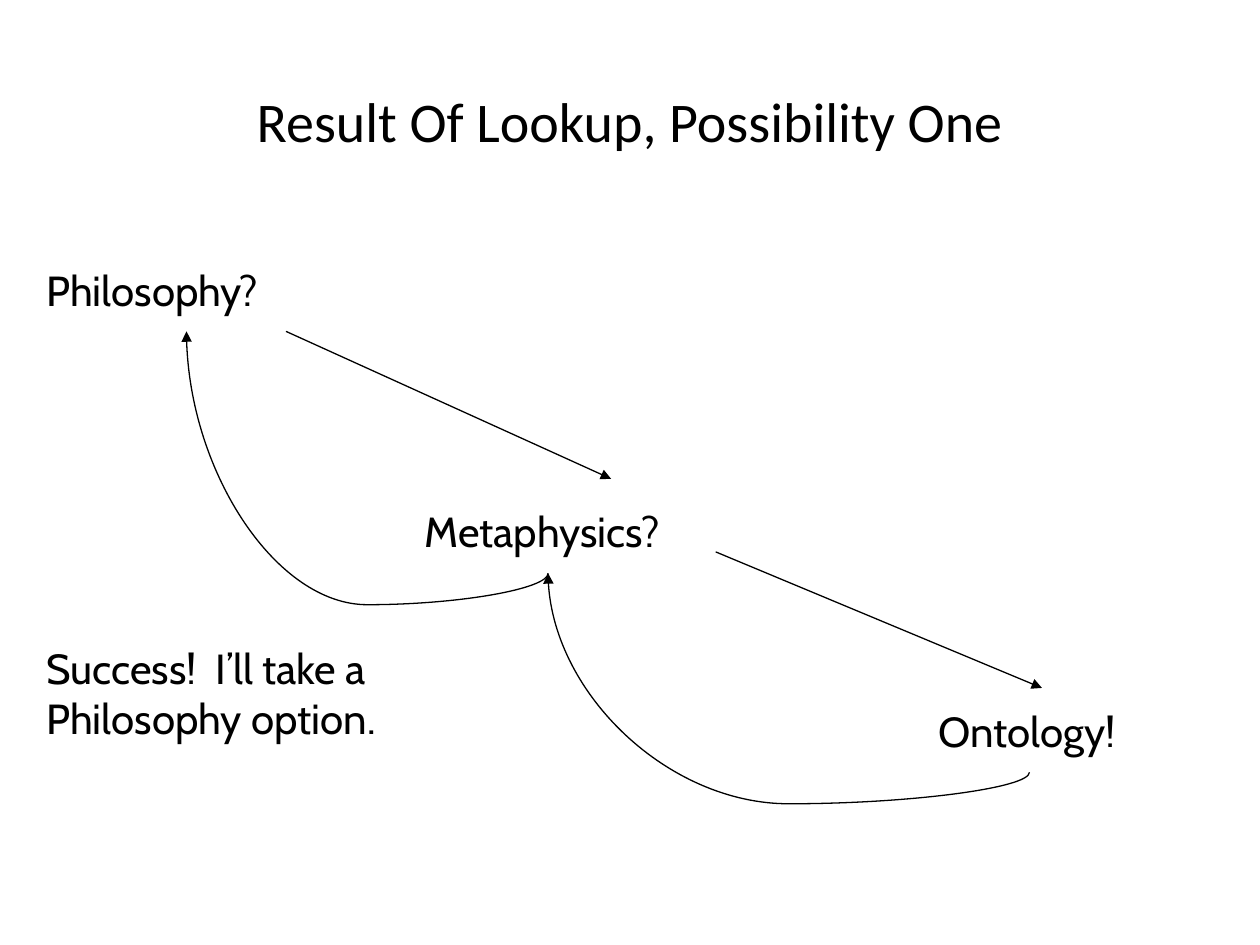
from dataclasses import dataclass

from lxml import etree
from pptx import Presentation
from pptx.dml.color import RGBColor
from pptx.enum.shapes import MSO_CONNECTOR
from pptx.enum.text import MSO_ANCHOR, MSO_AUTO_SIZE, PP_ALIGN
from pptx.oxml.ns import qn
from pptx.util import Inches, Pt

STRAIGHT, CURVE = MSO_CONNECTOR.STRAIGHT, MSO_CONNECTOR.CURVE
MIDDLE, TOP = MSO_ANCHOR.MIDDLE, MSO_ANCHOR.TOP
CENTER, LEFT = PP_ALIGN.CENTER, PP_ALIGN.LEFT
GROW = MSO_AUTO_SIZE.SHAPE_TO_FIT_TEXT
TITLE_ONLY = 5
QUARTER_TURN_BACK = 270 * 60000


@dataclass(frozen=True)
class Theme:
    ink: RGBColor = RGBColor(0, 0, 0)
    title_font: str = "Calibri"
    label_font: str = "Cabin"
    title_size: int = 32
    label_size: int = 24
    line_width: float = 0.75


THEME = Theme()
WIDTH, HEIGHT = 10, 7.5

TITLE = ("Result Of Lookup, Possibility One", (0.75, 0.15, 8.5, 1.61))
LABELS = [
    ("Philosophy?", (0.27, 2.05, 2.42, 0.5), True),
    ("Metaphysics?", (3.27, 3.96, 2.48, 0.5), True),
    ("Ontology!", (7.35, 5.55, 1.63, 0.5), False),
    ("Success!  I’ll take a Philosophy option.", (0.27, 5.05, 2.83, 1.31), True),
]
QUESTIONS = [((2.27, 2.63), (4.85, 3.8)), ((5.68, 4.38), (8.27, 5.46))]
ANSWERS = [((8.17, 6.13), (4.35, 4.55)), ((4.35, 4.55), (1.48, 2.63))]
ANSWER_DIP = 0.25


def place(shape, bounds):
    shape.left, shape.top, shape.width, shape.height = map(Inches, bounds)


def write(frame, text, font, size, align, anchor):
    frame.text = text
    frame.vertical_anchor = anchor
    para = frame.paragraphs[0]
    para.alignment = align
    span = para.runs[0]
    span.font.name = font
    span.font.size = Pt(size)
    span.font.color.rgb = THEME.ink


def add_label(page, text, bounds, wrap):
    box = page.shapes.add_textbox(*map(Inches, bounds))
    write(box.text_frame, text, THEME.label_font, THEME.label_size, LEFT, TOP)
    box.text_frame.word_wrap = wrap
    box.text_frame.auto_size = GROW


def add_arrow(page, kind, start, end):
    arrow = page.shapes.add_connector(kind, *map(Inches, start + end))
    arrow.line.color.rgb = THEME.ink
    arrow.line.width = Pt(THEME.line_width)
    etree.SubElement(arrow.line._get_or_add_ln(), qn("a:tailEnd"), type="triangle")
    etree.SubElement(arrow._element.spPr, qn("a:effectLst"))
    return arrow


def add_answer(page, start, end):
    across, rise = start[0] - end[0], start[1] - end[1]
    middle_x, middle_y = (start[0] + end[0]) / 2, (start[1] + end[1]) / 2
    left, right = middle_x - rise / 2, middle_x + rise / 2
    top, bottom = middle_y - across / 2, middle_y + across / 2
    arrow = add_arrow(page, CURVE, (left, bottom), (right, top))
    properties = arrow._element.spPr
    properties.find(qn("a:xfrm")).set("rot", str(QUARTER_TURN_BACK))
    guides = properties.find(qn("a:prstGeom")).find(qn("a:avLst"))
    bend = round(-ANSWER_DIP / rise * 100000)
    etree.SubElement(guides, qn("a:gd"), name="adj1", fmla=f"val {bend}")


def main():
    deck = Presentation()
    deck.slide_width, deck.slide_height = Inches(WIDTH), Inches(HEIGHT)
    page = deck.slides.add_slide(deck.slide_layouts[TITLE_ONLY])
    text, bounds = TITLE
    title = page.shapes.title
    place(title, bounds)
    write(title.text_frame, text, THEME.title_font, THEME.title_size, CENTER, MIDDLE)
    for label in LABELS:
        add_label(page, *label)
    for start, end in QUESTIONS:
        add_arrow(page, STRAIGHT, start, end)
    for start, end in ANSWERS:
        add_answer(page, start, end)
    deck.save("out.pptx")


if __name__ == "__main__":
    main()
